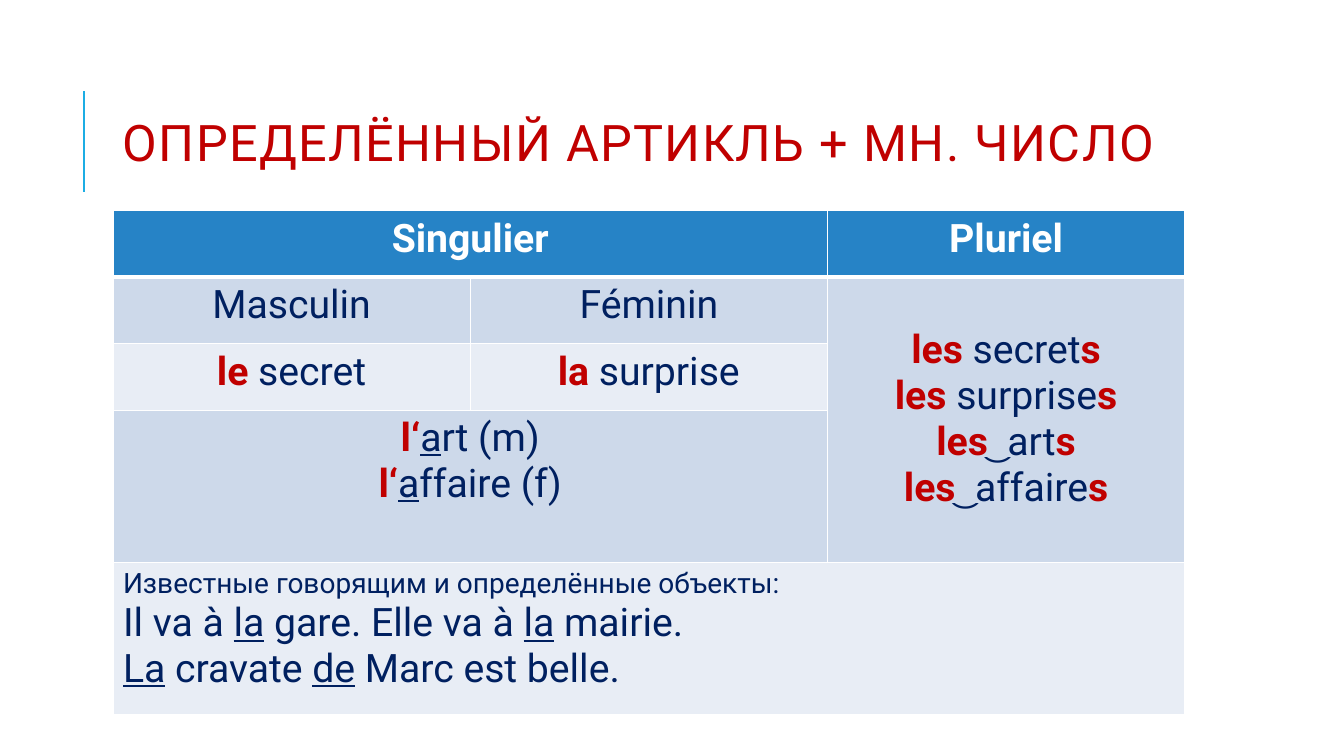
from dataclasses import dataclass

import pptx
import pptx.dml.color
import pptx.enum.shapes
import pptx.enum.text
import pptx.oxml.ns
import pptx.util
from lxml import etree

Inches = pptx.util.Inches
RGBColor = pptx.dml.color.RGBColor
PP_ALIGN = pptx.enum.text.PP_ALIGN
MSO_ANCHOR = pptx.enum.text.MSO_ANCHOR
qn = pptx.oxml.ns.qn

WHITE = RGBColor(0xFF, 0xFF, 0xFF)
RED = RGBColor(0xC0, 0x00, 0x00)
NAVY = RGBColor(0x00, 0x20, 0x60)
CYAN = RGBColor(0x1C, 0xAD, 0xE4)
HEADER_BLUE = RGBColor(0x26, 0x83, 0xC6)
BAND_DARK = RGBColor(0xCD, 0xD9, 0xEA)
BAND_LIGHT = RGBColor(0xE8, 0xED, 0xF5)
FONT = "Roboto"


@dataclass(frozen=True)
class Run:
    text: str
    color: RGBColor = NAVY
    size: int = 28
    bold: bool = False
    underline: bool = False


@dataclass(frozen=True)
class Entry:
    row: int
    column: int
    lines: list[list[Run]]
    fill: RGBColor
    row_span: int = 1
    column_span: int = 1
    align: PP_ALIGN = PP_ALIGN.CENTER
    top_margin: float = 0.05


def article(text: str) -> Run:
    return Run(text, RED, bold=True)


def underlined(text: str) -> Run:
    return Run(text, underline=True)


def heading(text: str) -> Run:
    return Run(text, WHITE, bold=True)


def plural(noun: str) -> list[Run]:
    return [article("les"), Run(f" {noun}"), article("s")]


def elided(vowel: str, rest: str) -> list[Run]:
    return [article("l‘"), underlined(vowel), Run(rest)]


def add_text(paragraph, text: str, *, color: RGBColor, size: int,
             bold: bool = False, underline: bool = False, spacing: float = 0) -> None:
    run = paragraph.add_run()
    run.text = text
    font = run.font
    font.name, font.size = FONT, pptx.util.Pt(size)
    font.bold, font.underline = bold, underline
    font.color.rgb = color
    if spacing:
        run._r.get_or_add_rPr().set("spc", str(round(spacing * 100)))


def set_borders(cell, widths: dict[str, float]) -> None:
    properties = cell._tc.get_or_add_tcPr()
    for side, width in widths.items():
        border = etree.SubElement(properties, qn(f"a:ln{side}"),
                                  w=str(pptx.util.Pt(width)))
        fill = etree.SubElement(border, qn("a:solidFill"))
        etree.SubElement(fill, qn("a:srgbClr"), val=str(WHITE))


def fill_entry(table, entry: Entry) -> None:
    cell = table.cell(entry.row, entry.column)
    if entry.row_span * entry.column_span > 1:
        cell.merge(table.cell(entry.row + entry.row_span - 1,
                              entry.column + entry.column_span - 1))
    cell.margin_top = Inches(entry.top_margin)
    frame = cell.text_frame
    for index, line in enumerate(entry.lines):
        paragraph = frame.add_paragraph() if index else frame.paragraphs[0]
        paragraph.alignment = entry.align
        for run in line:
            add_text(paragraph, run.text, color=run.color, size=run.size,
                     bold=run.bold, underline=run.underline)
    for row in range(entry.row, entry.row + entry.row_span):
        for column in range(entry.column, entry.column + entry.column_span):
            covered = table.cell(row, column)
            covered.fill.solid()
            covered.fill.fore_color.rgb = entry.fill


ENTRIES = [
    Entry(0, 0, [[heading("Singulier")]], HEADER_BLUE, column_span=2),
    Entry(0, 2, [[heading("Pluriel")]], HEADER_BLUE),
    Entry(1, 0, [[Run("Masculin")]], BAND_DARK),
    Entry(1, 1, [[Run("Féminin")]], BAND_DARK),
    Entry(1, 2, [plural(noun) for noun in ("secret", "surprise", "͜ art", "͜ affaire")],
          BAND_DARK, row_span=3, top_margin=0.5),
    Entry(2, 0, [[article("le"), Run(" secret")]], BAND_LIGHT),
    Entry(2, 1, [[article("la"), Run(" surprise")]], BAND_LIGHT),
    Entry(3, 0, [elided("a", "rt (m)"), elided("a", "ffaire (f)")],
          BAND_DARK, column_span=2),
    Entry(4, 0, [
        [Run("Известные говорящим и определённые объекты:", size=20)],
        [Run("Il va à "), underlined("la"), Run(" gare. Elle va à "),
         underlined("la"), Run(" mairie.")],
        [underlined("La"), Run(" cravate "), underlined("de"),
         Run(" Marc est belle.")],
    ], BAND_LIGHT, column_span=3, align=PP_ALIGN.LEFT),
]

presentation = pptx.Presentation()
presentation.slide_width, presentation.slide_height = Inches(13.33), Inches(7.5)
slide = presentation.slides.add_slide(presentation.slide_layouts[6])

# Accent line beside the title
accent = slide.shapes.add_connector(pptx.enum.shapes.MSO_CONNECTOR.STRAIGHT,
                                    Inches(0.83), Inches(1.9), Inches(0.83), Inches(0.9))
accent.line.color.rgb = CYAN
accent.line.width = pptx.util.Pt(1.5)
etree.SubElement(accent._element.spPr, qn("a:effectLst"))

# Title
title = slide.shapes.add_textbox(Inches(1.12), Inches(0.64),
                                 Inches(10.63), Inches(1.64)).text_frame
title.word_wrap = True
title.vertical_anchor = MSO_ANCHOR.MIDDLE
title.paragraphs[0].line_spacing = 0.8
add_text(title.paragraphs[0], "ОПРЕДЕЛЁННЫЙ АРТИКЛЬ + МН. ЧИСЛО",
         color=RED, size=36, spacing=1)

# Article table
ROW_HEIGHTS = [0.66, 0.66, 0.66, 1.51, 1.51]
articles = slide.shapes.add_table(len(ROW_HEIGHTS), 3, Inches(1.12), Inches(2.09),
                                  Inches(10.63), Inches(sum(ROW_HEIGHTS))).table
articles.first_row = articles.horz_banding = False
for table_row, height in zip(articles.rows, ROW_HEIGHTS):
    table_row.height = Inches(height)
for row_index in range(len(ROW_HEIGHTS)):
    for column_index in range(3):
        set_borders(articles.cell(row_index, column_index),
                    {"L": 1, "R": 1, "T": 3 if row_index == 1 else 1,
                     "B": 3 if row_index == 0 else 1})
for article_entry in ENTRIES:
    fill_entry(articles, article_entry)

presentation.save("out.pptx")
